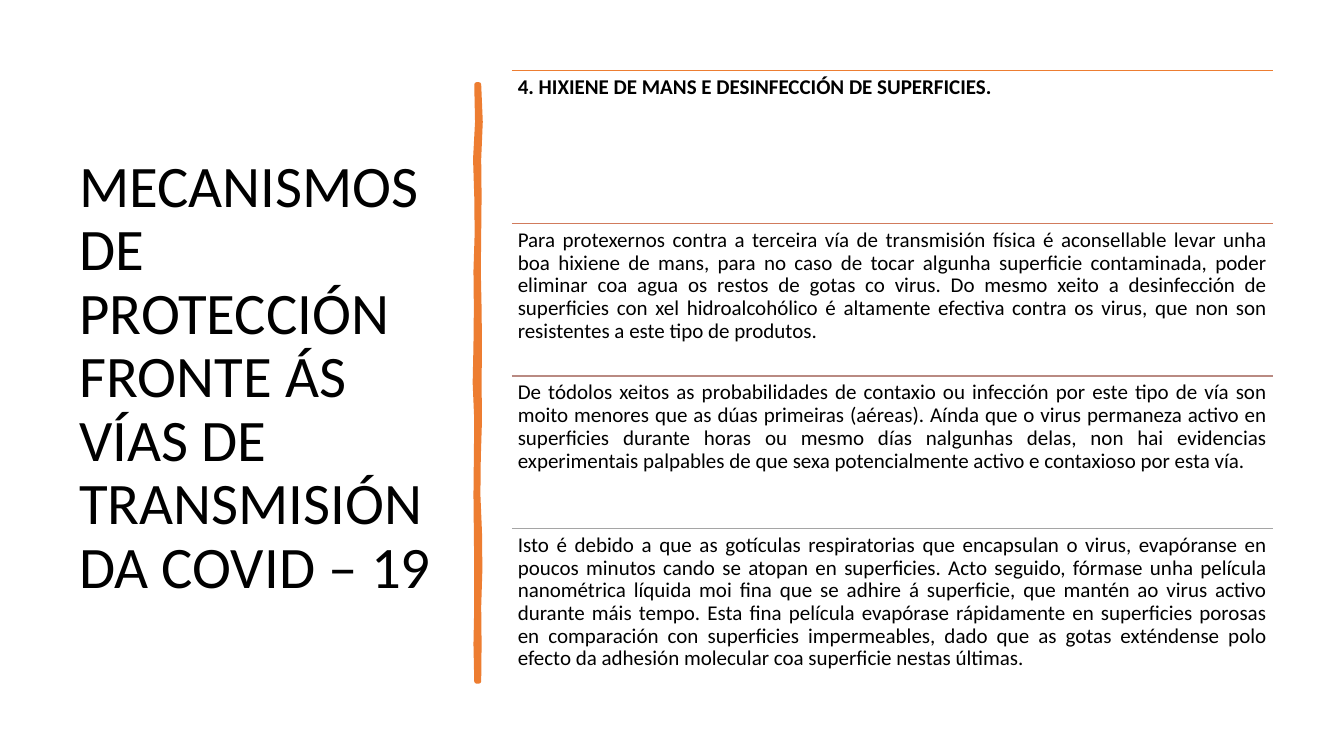
from dataclasses import dataclass

from lxml.etree import SubElement
from pptx import Presentation
from pptx.dml.color import RGBColor
from pptx.enum.shapes import MSO_CONNECTOR
from pptx.enum.text import MSO_ANCHOR, PP_ALIGN
from pptx.oxml.ns import qn
from pptx.util import Cm, Pt


@dataclass(frozen=True)
class Theme:
    font: str = "Calibri"
    ink: str = "000000"
    accent: str = "ED7D31"
    rules: tuple = ("ED7D31", "D17B5C", "B98A82", "A5A5A5")
    title_size: int = 42
    body_size: int = 15
    divider_width: float = 3.25
    rule_width: float = 1


@dataclass(frozen=True)
class Box:
    left: float
    top: float
    width: float
    height: float

    def lengths(self):
        return Cm(self.left), Cm(self.top), Cm(self.width), Cm(self.height)


THEME = Theme()

TITLE = "MECANISMOS DE PROTECCIÓN FRONTE ÁS VÍAS DE TRANSMISIÓN DA COVID – 19"
HEADING = "4. HIXIENE DE MANS E DESINFECCIÓN DE SUPERFICIES."
SECTIONS = [
    "Para protexernos contra a terceira vía de transmisión física é aconsellable levar unha "
    "boa hixiene de mans, para no caso de tocar algunha superficie contaminada, poder eliminar "
    "coa agua os restos de gotas co virus. Do mesmo xeito a desinfección de superficies con xel "
    "hidroalcohólico é altamente efectiva contra os virus, que non son resistentes a este tipo "
    "de produtos.",
    "De tódolos xeitos as probabilidades de contaxio ou infección por este tipo de vía son "
    "moito menores que as dúas primeiras (aéreas). Aínda que o virus permaneza activo en "
    "superficies durante horas ou mesmo días nalgunhas delas, non hai evidencias experimentais "
    "palpables de que sexa potencialmente activo e contaxioso por esta vía.",
    "Isto é debido a que as gotículas respiratorias que encapsulan o virus, evapóranse en "
    "poucos minutos cando se atopan en superficies. Acto seguido, fórmase unha película "
    "nanométrica líquida moi fina que se adhire á superficie, que mantén ao virus activo "
    "durante máis tempo. Esta fina película evapórase rápidamente en superficies porosas en "
    "comparación con superficies impermeables, dado que as gotas exténdense polo efecto da "
    "adhesión molecular coa superficie nestas últimas.",
]

LEFT_EDGE = [4, 6, 1, 4, 5, 2, 3, 2, 0, 4, 3, 2, 3, 4, 4, 2, 4]
RIGHT_EDGE = [10, 14, 10, 11, 10, 9, 11, 12, 11, 12, 9, 8, 12, 13, 10, 11, 10]


def color(value):
    return RGBColor.from_string(value)


def add_text(page, box, text, size, bold=False, align=PP_ALIGN.LEFT,
             anchor=MSO_ANCHOR.TOP, inset=(0.15, 0.15)):
    frame = page.shapes.add_textbox(*box.lengths()).text_frame
    frame.word_wrap = True
    frame.vertical_anchor = anchor
    frame.margin_left = frame.margin_right = Cm(inset[0])
    frame.margin_top = frame.margin_bottom = Cm(inset[1])
    para = frame.paragraphs[0]
    para.alignment = align
    para.line_spacing = 0.9
    span = para.add_run()
    span.text = text
    span.font.name = THEME.font
    span.font.size = Pt(size)
    span.font.bold = bold
    span.font.color.rgb = color(THEME.ink)


def add_rule(page, box, tint):
    left, top, width, _ = box.lengths()
    rule = page.shapes.add_connector(MSO_CONNECTOR.STRAIGHT, left, top, left + width, top)
    rule.line.color.rgb = color(tint)
    rule.line.width = Pt(THEME.rule_width)
    SubElement(rule.element.spPr, qn("a:effectLst"))


def draw_title(page, box):
    add_text(page, box, TITLE, THEME.title_size, anchor=MSO_ANCHOR.MIDDLE, inset=(0.25, 0.13))


def draw_divider(page, box):
    step = box.height / (len(LEFT_EDGE) - 1)

    def edge(offsets):
        return [(Cm(box.left + offset / 100), Cm(box.top + index * step))
                for index, offset in enumerate(offsets)]

    outline = edge(RIGHT_EDGE) + edge(LEFT_EDGE)[::-1]
    builder = page.shapes.build_freeform(*outline[0])
    builder.add_line_segments(outline[1:], close=True)
    divider = builder.convert_to_shape()
    divider.shadow.inherit = False
    divider.fill.solid()
    divider.fill.fore_color.rgb = color(THEME.accent)
    divider.line.color.rgb = color(THEME.accent)
    divider.line.width = Pt(THEME.divider_width)
    SubElement(divider.line._get_or_add_ln(), qn("a:round"))


def draw_sections(page, box):
    texts = [HEADING, *SECTIONS]
    row_height = box.height / len(texts)
    for index, (text, tint) in enumerate(zip(texts, THEME.rules)):
        row = Box(box.left, box.top + index * row_height, box.width, row_height)
        heading = index == 0
        add_rule(page, row, tint)
        add_text(page, row, text, THEME.body_size, bold=heading,
                 align=PP_ALIGN.LEFT if heading else PP_ALIGN.JUSTIFY)


def main():
    deck = Presentation()
    deck.slide_width, deck.slide_height = Cm(33.87), Cm(19.05)
    page = deck.slides.add_slide(deck.slide_layouts[6])
    draw_title(page, Box(1.75, 1.78, 9.5, 15.52))
    draw_divider(page, Box(11.97, 2.13, 0.14, 15.04))
    draw_sections(page, Box(12.9, 1.78, 19.18, 15.38))
    deck.save("out.pptx")


if __name__ == "__main__":
    main()
